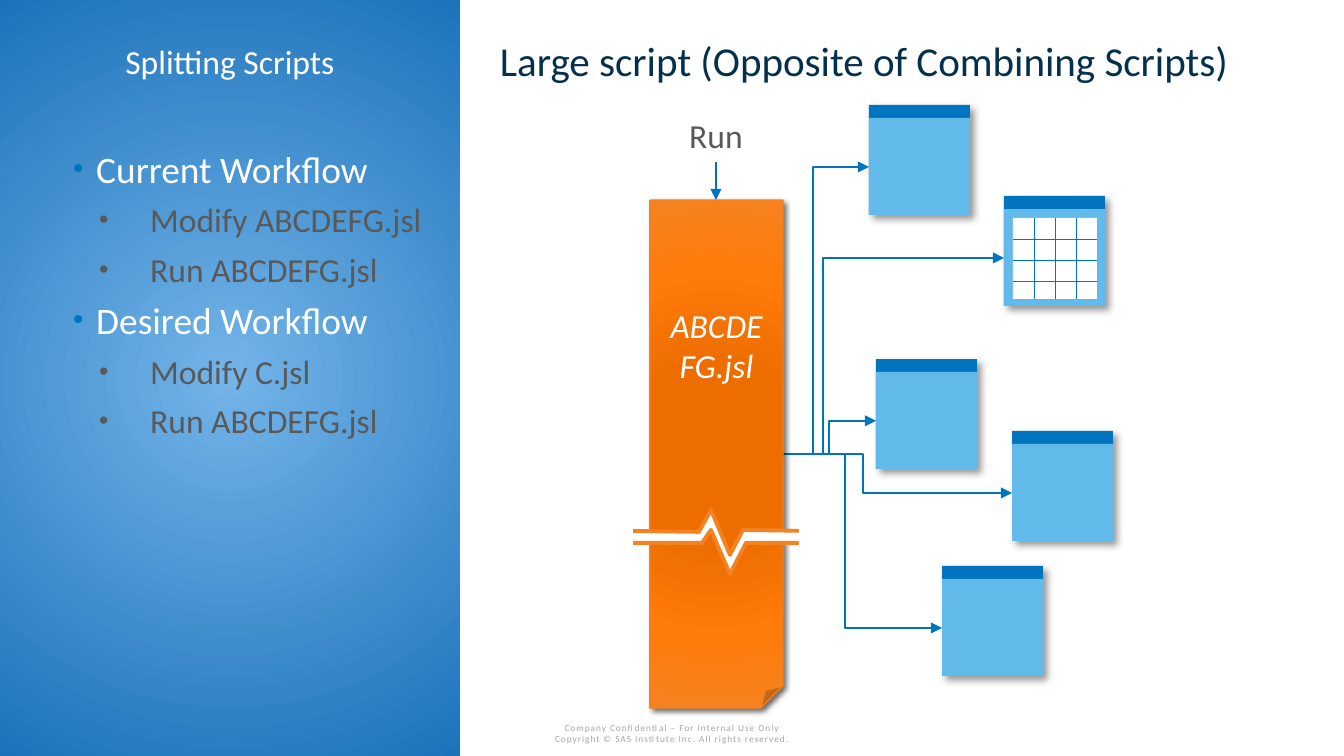
from lxml import etree
from pptx import Presentation
from pptx.dml.color import RGBColor
from pptx.enum.dml import MSO_PATTERN
from pptx.enum.shapes import MSO_CONNECTOR, MSO_SHAPE
from pptx.enum.text import MSO_ANCHOR, MSO_AUTO_SIZE, PP_ALIGN
from pptx.oxml import parse_xml
from pptx.oxml.ns import nsdecls, qn
from pptx.util import Pt

RECT, FOLDED = MSO_SHAPE.RECTANGLE, MSO_SHAPE.FOLDED_CORNER
STRAIGHT, ELBOW = MSO_CONNECTOR.STRAIGHT, MSO_CONNECTOR.ELBOW
CENTER, LEFT = PP_ALIGN.CENTER, PP_ALIGN.LEFT
TOP, MIDDLE, BOTTOM = MSO_ANCHOR.TOP, MSO_ANCHOR.MIDDLE, MSO_ANCHOR.BOTTOM
PX = 9144000 / 1344
BLUE, SKY, ORANGE = "0074BE", "61BAE9", "F58220"
WHITE, GRAY = "FFFFFF", "595959"
color = RGBColor.from_string

deck = Presentation()
deck.slide_width, deck.slide_height = round(1344 * PX), round(756 * PX)
page = deck.slides.add_slide(deck.slide_layouts[5])
shapes = page.shapes


def add_block(kind, bounds, fill, center=50, shadow=None):
    """Add a borderless shape; fill is a hex colour or a list of radial stops."""
    block = shapes.add_shape(kind, *[round(n * PX) for n in bounds])
    block.shadow.inherit = False
    block.line.fill.background()
    block.fill.solid()
    if isinstance(fill, str):
        block.fill.fore_color.rgb = color(fill)
    else:
        stops = "".join(f'<a:gs pos="{pos * 1000}"><a:srgbClr val="{tone}"/></a:gs>'
                        for pos, tone in fill)
        edges = " ".join(f'{side}="{center * 1000}"' for side in "ltrb")
        solid = block._element.spPr.find(qn("a:solidFill"))
        solid.getparent().replace(solid, parse_xml(
            f'<a:gradFill {nsdecls("a")} rotWithShape="1"><a:gsLst>{stops}</a:gsLst>'
            f'<a:path path="circle"><a:fillToRect {edges}/></a:path></a:gradFill>'))
    if shadow:
        alpha, blur, distance = shadow
        block._element.spPr.find(qn("a:effectLst")).append(parse_xml(
            f'<a:outerShdw {nsdecls("a")} blurRad="{Pt(blur)}" dist="{Pt(distance)}" '
            f'dir="2700000" algn="tl" rotWithShape="0"><a:srgbClr val="000000">'
            f'<a:alpha val="{alpha * 1000}"/></a:srgbClr></a:outerShdw>'))
    return block


def write(box, lines, size, tone, align=LEFT, anchor=TOP, wrap=True):
    """Fill a box with equally formatted paragraphs."""
    frame = box.text_frame
    frame.word_wrap = wrap
    frame.auto_size = MSO_AUTO_SIZE.NONE
    frame.vertical_anchor = anchor
    frame.text = "\n".join(lines)
    for para in frame.paragraphs:
        para.alignment = align
        para.font.name, para.font.size = "Calibri", Pt(size)
        para.font.color.rgb = color(tone)
    return frame


# Footer
footer = shapes.add_textbox(*[round(n * PX) for n in (487, 715, 370, 36)])
frame = write(footer, ["Company Confidential – For Internal Use Only",
                       "Copyright © SAS Institute Inc. All rights reserved."],
              5, "A6A6A6", CENTER, BOTTOM)
for para in frame.paragraphs:
    para.runs[0]._r.get_or_add_rPr().set("spc", "50")

# Side panel with the title in front of it
panel = add_block(RECT, (0, 0, 460, 756), [(0, "73B4E9"), (100, "1D73BA")])
title = shapes.title
panel._element.addnext(title._element)
title.left, title.top, title.width, title.height = [round(n * PX) for n in (0, 34, 460, 54)]
write(title, ["Splitting Scripts"], 18, WHITE, CENTER)

# Heading
heading = shapes.add_textbox(*[round(n * PX) for n in (460, 29, 884, 63)])
frame = write(heading, ["Large script (Opposite of Combining Scripts)"], 22, "04304B",
              anchor=MIDDLE)
frame.margin_left = frame.margin_right = round(40 * PX)

# Workflow bullets: text, level
steps = [("Current Workflow", 0), ("Modify ABCDEFG.jsl", 1), ("Run ABCDEFG.jsl", 1),
         ("Desired Workflow", 0), ("Modify C.jsl", 1), ("Run ABCDEFG.jsl", 1)]
styles = [(23, 23, BLUE, 20, WHITE), (77, 51, GRAY, 18, GRAY)]
workflow = shapes.add_textbox(*[round(n * PX) for n in (60, 146, 392, 305)])
frame = workflow.text_frame
frame.word_wrap = True
for index, (text, level) in enumerate(steps):
    margin, hanging, bullet, size, tone = styles[level]
    para = frame.paragraphs[0] if index == 0 else frame.add_paragraph()
    para.text = text
    para.level = level
    props = para._p.get_or_add_pPr()
    props.set("marL", str(round(margin * PX)))
    props.set("indent", str(-round(hanging * PX)))
    marker = etree.SubElement(props, qn("a:buClr"))
    etree.SubElement(marker, qn("a:srgbClr"), val=bullet)
    etree.SubElement(props, qn("a:buSzPct"), val="80000")
    etree.SubElement(props, qn("a:buFont"), typeface="Arial")
    etree.SubElement(props, qn("a:buChar"), char="•")
    para.line_spacing = 0.85
    para.space_before = Pt(8 if index else 0)
    para.font.name, para.font.size = "Calibri", Pt(size)
    para.font.color.rgb = color(tone)

# Run label
label = shapes.add_textbox(*[round(n * PX) for n in (676, 108, 81, 54)])
write(label, ["Run"], 18, GRAY, wrap=False)

# Output windows: left, top, x where the connector bends
windows = [(869, 105, 813), (1004, 196, 823), (876, 359, 829), (1012, 431, 863),
           (942, 566, 845)]
for left, top, bend in windows:
    add_block(RECT, (left, top, 101, 110), BLUE, shadow=(40, 4, 3))
    add_block(RECT, (left, top + 13, 101, 97), SKY)

# Data grid in the second window
left, top, bend = windows[1]
grid = add_block(RECT, (left + 9, top + 22, 84, 81), WHITE)
grid.fill.patterned()
grid.fill.pattern = MSO_PATTERN.DOTTED_GRID
grid.fill.fore_color.rgb = color(BLUE)
grid.fill.back_color.rgb = color(WHITE)

# Arrows: into the script, then from the script to each window
arrows = [(STRAIGHT, 716, 162, 716, 200, 716)]
arrows += [(ELBOW, 783, 454, left, top + 62, bend) for left, top, bend in windows]
for kind, x1, y1, x2, y2, bend in arrows:
    arrow = shapes.add_connector(kind, *[round(n * PX) for n in (x1, y1, x2, y2)])
    arrow.line.color.rgb = color(BLUE)
    arrow.line.width = Pt(0.75)
    props = arrow._element.spPr
    etree.SubElement(arrow.line._get_or_add_ln(), qn("a:tailEnd"), type="triangle")
    etree.SubElement(props, qn("a:effectLst"))
    if kind == ELBOW:
        guides = props.find(qn("a:prstGeom")).get_or_add_avLst()
        share = round((bend - x1) / (x2 - x1) * 100000)
        etree.SubElement(guides, qn("a:gd"), name="adj1", fmla=f"val {share}")

# Large script
script = add_block(FOLDED, (650, 200, 133, 508),
                   [(0, "ED6D00"), (34, "ED6D00"), (70, "FF7B0A"), (100, ORANGE)],
                   center=100, shadow=(60, 3, 2))
script.line.color.rgb = color(ORANGE)
script.line.width = Pt(0.75)
frame = write(script, ["ABCDEFG.jsl"], 18, WHITE, CENTER)
frame.margin_top = round(105 * PX)
frame.paragraphs[0].font.italic = True

# Tear across the script, with white ends covering its outline
outline = [(629, 531), (699, 532), (711, 510), (730, 555), (743, 530), (805, 531),
           (805, 543), (746, 543), (730, 574), (711, 530), (702, 543), (628, 543)]
builder = shapes.build_freeform(*outline[0], scale=PX)
builder.add_line_segments(outline[1:], close=True)
tear = builder.convert_to_shape()
tear.shadow.inherit = False
tear.fill.solid()
tear.fill.fore_color.rgb = color(WHITE)
tear.line.color.rgb = color(ORANGE)
tear.line.width = Pt(2.08)
for left in (610, 799):
    add_block(RECT, (left, 493, 23, 77), WHITE)

deck.save("out.pptx")
